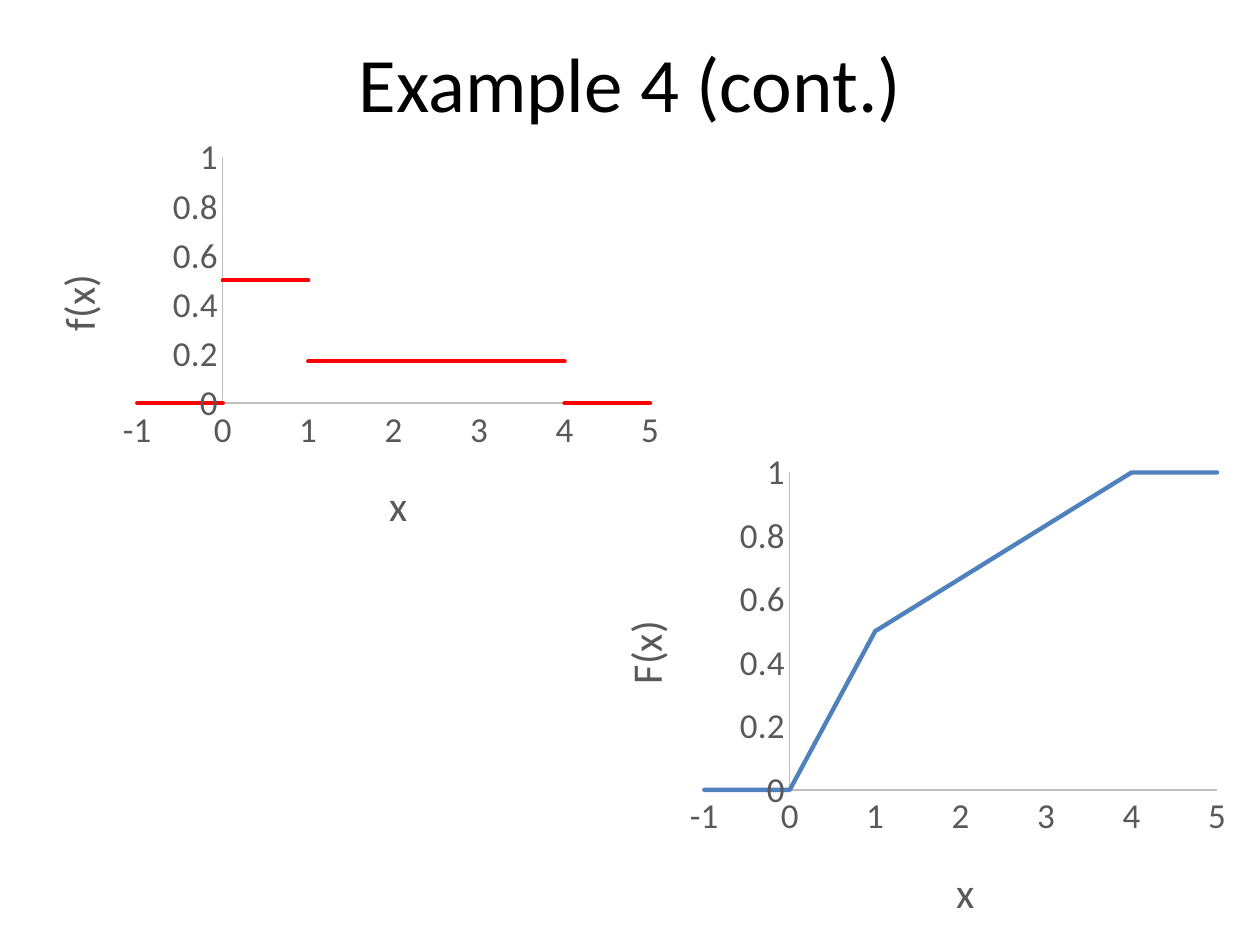
from dataclasses import dataclass

from lxml import etree
from pptx import Presentation
from pptx.chart.data import XyChartData
from pptx.dml.color import RGBColor
from pptx.enum.chart import XL_CHART_TYPE, XL_TICK_MARK
from pptx.enum.text import MSO_ANCHOR, PP_ALIGN
from pptx.oxml.ns import qn
from pptx.util import Inches, Pt

SCATTER_LINES = XL_CHART_TYPE.XY_SCATTER_LINES_NO_MARKERS
NO_TICK = XL_TICK_MARK.NONE
CENTER = PP_ALIGN.CENTER
MIDDLE = MSO_ANCHOR.MIDDLE

BLACK = RGBColor(0x00, 0x00, 0x00)
GRAY = RGBColor(0x59, 0x59, 0x59)
AXIS_GRAY = RGBColor(0xBF, 0xBF, 0xBF)
RED = RGBColor(0xFF, 0x00, 0x00)
BLUE = RGBColor(0x4F, 0x81, 0xBD)
FONT = "Calibri"

# The slide is a grid of 100 columns and 75 rows
WIDTH, HEIGHT = Inches(10), Inches(7.5)
COLUMN, ROW = WIDTH / 100, HEIGHT / 75

# Space around the plot and places of axis titles, in grid cells
PLOT_LEFT, PLOT_TOP, PLOT_RIGHT, PLOT_BOTTOM = 10.1, 2.5, 1.7, 12.2
X_TITLE_LEFT, X_TITLE_RISE = 29.5, 6.9
Y_TITLE_LEFT = 2.6

Points = list[tuple[float, float]]


@dataclass
class Graph:
    left: float
    top: float
    width: float
    height: float
    y_title: str
    y_title_top: float
    color: RGBColor
    lines: list[Points]


GRAPHS = [
    Graph(0.8, 10, 52.5, 34.2, "f(x)", 11.2, RED, [
        [(-3, 0), (0, 0)],
        [(0, 0.5), (1, 0.5)],
        [(1, 0.17), (4, 0.17)],
        [(4, 0), (10, 0)],
    ]),
    Graph(4.58 * 10, 35, 52.5, 39.9, "F(x)", 13.7, BLUE, [
        [(-3, 0), (0, 0), (0, 0), (1, 0.5), (1, 0.5), (4, 1), (4, 1), (10, 1)],
    ]),
]


def set_values(target, values: dict) -> None:
    for name, value in values.items():
        setattr(target, name, value)


def set_font(font, size: float, color: RGBColor) -> None:
    set_values(font, {"name": FONT, "size": Pt(size), "bold": False})
    font.color.rgb = color


def set_line(line, width: float, color: RGBColor) -> None:
    line.width = Pt(width)
    line.color.rgb = color


def set_layout(parent, **values) -> None:
    """Give a chart part a manual layout, in shares of the chart."""
    layout = parent.find(qn("c:layout"))
    if layout is None:
        layout = etree.Element(qn("c:layout"))
        parent.insert(0, layout)
    manual = etree.SubElement(layout, qn("c:manualLayout"))
    for name, value in values.items():
        etree.SubElement(manual, qn(f"c:{name}")).set("val", str(value))


def style_axis(axis, title: str, rotation: int, left: float, top: float, limits: dict) -> None:
    set_values(axis, {
        "has_major_gridlines": False,
        "major_tick_mark": NO_TICK,
        "minor_tick_mark": NO_TICK,
        **limits,
    })
    set_font(axis.tick_labels.font, 20, GRAY)
    set_values(axis.tick_labels, {"number_format": "General", "number_format_is_linked": False})
    set_line(axis.format.line, 0.75, AXIS_GRAY)
    para = axis.axis_title.text_frame.paragraphs[0]
    span = para.add_run()
    span.text = title
    set_font(span.font, 24, GRAY)
    element = axis.axis_title.element
    body = element.find(".//" + qn("a:bodyPr"))
    body.set("rot", str(rotation))
    body.set("vert", "horz")
    set_layout(element, xMode="edge", yMode="edge", x=left, y=top)


def add_graph(page, graph: Graph) -> None:
    data = XyChartData()
    for number, points in enumerate(graph.lines, 1):
        series = data.add_series(f"Series {number}")
        for x, y in points:
            series.add_data_point(x, y)
    box = (graph.left * COLUMN, graph.top * ROW, graph.width * COLUMN, graph.height * ROW)
    chart = page.shapes.add_chart(SCATTER_LINES, *map(round, box), data).chart
    set_values(chart, {"has_legend": False, "has_title": False})
    set_font(chart.font, 10, BLACK)
    chart.plots[0].vary_by_categories = False

    # Lines with round ends
    for series in chart.plots[0].series:
        series.smooth = False
        set_line(series.format.line, 2.5, graph.color)
    for line in chart.element.xpath(".//c:ser/c:spPr/a:ln"):
        line.set("cap", "rnd")

    # Axes and plot area
    style_axis(chart.category_axis, "x", 0, X_TITLE_LEFT / graph.width,
               1 - X_TITLE_RISE / graph.height,
               {"minimum_scale": -1, "maximum_scale": 5, "major_unit": 1})
    style_axis(chart.value_axis, graph.y_title, -5400000, Y_TITLE_LEFT / graph.width,
               graph.y_title_top / graph.height,
               {"maximum_scale": 1, "major_unit": 0.2})
    set_layout(chart.element.find(".//" + qn("c:plotArea")),
               layoutTarget="inner", xMode="edge", yMode="edge",
               x=PLOT_LEFT / graph.width, y=PLOT_TOP / graph.height,
               w=1 - (PLOT_LEFT + PLOT_RIGHT) / graph.width,
               h=1 - (PLOT_TOP + PLOT_BOTTOM) / graph.height)


def add_title(page, text: str) -> None:
    title = page.shapes.title
    set_values(title, {"left": round(5 * COLUMN), "top": round(0.2 * ROW),
                       "width": round(90 * COLUMN), "height": round(12.5 * ROW)})
    title.text_frame.vertical_anchor = MIDDLE
    para = title.text_frame.paragraphs[0]
    para.alignment = CENTER
    span = para.add_run()
    span.text = text
    set_font(span.font, 44, BLACK)


def main() -> None:
    deck = Presentation()
    set_values(deck, {"slide_width": WIDTH, "slide_height": HEIGHT})
    page = deck.slides.add_slide(deck.slide_layouts[5])
    add_title(page, "Example 4 (cont.)")
    for graph in GRAPHS:
        add_graph(page, graph)
    deck.save("out.pptx")


if __name__ == "__main__":
    main()
